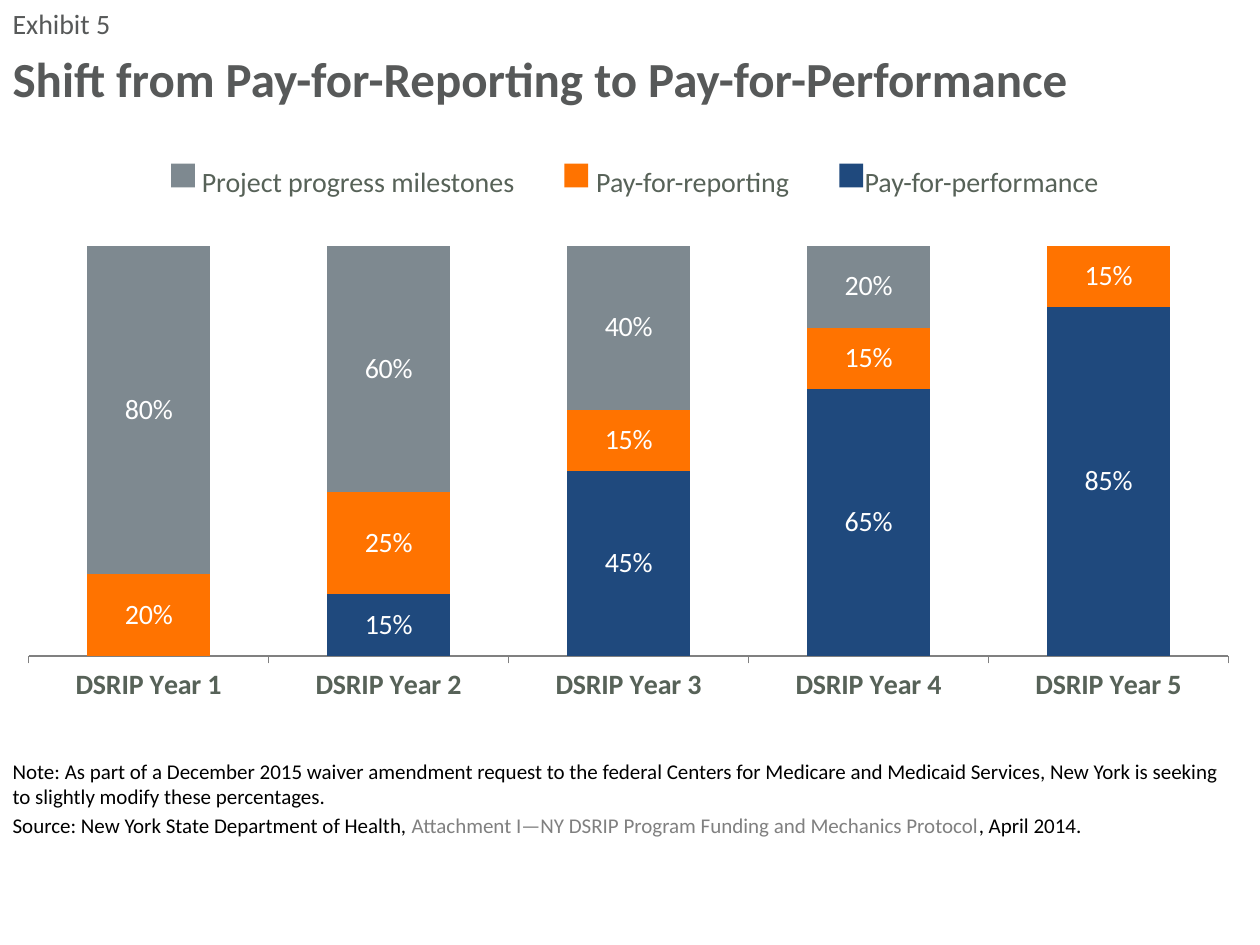
from pptx import Presentation
from pptx.chart.data import CategoryChartData
from pptx.dml.color import RGBColor
from pptx.enum.chart import XL_CHART_TYPE, XL_LABEL_POSITION, XL_TICK_LABEL_POSITION, XL_TICK_MARK
from pptx.enum.shapes import MSO_SHAPE
from pptx.enum.text import MSO_ANCHOR, MSO_AUTO_SIZE, PP_ALIGN
from pptx.oxml import parse_xml
from pptx.oxml.ns import nsdecls
from pptx.util import Cm, Pt

STACKED = XL_CHART_TYPE.COLUMN_STACKED
CENTER = XL_LABEL_POSITION.CENTER
RECTANGLE = MSO_SHAPE.RECTANGLE
TOP, MIDDLE, BOTTOM = MSO_ANCHOR.TOP, MSO_ANCHOR.MIDDLE, MSO_ANCHOR.BOTTOM

FONT = "Calibri"
HEADING, LABEL, BLACK, GRAY, WHITE = "575959", "576258", "000000", "808080", "FFFFFF"
BLUE, ORANGE, SLATE = "1F497D", "FF7300", "7E8990"

# Each paragraph is a list of (text, colour) spans.
EXHIBIT = [[("Exhibit 5", HEADING)]]
TITLE = [[("Shift from Pay-for-Reporting to Pay-for-Performance", HEADING)]]
NOTES = [
    [("Note: As part of a December 2015 waiver amendment request to the federal Centers for "
      "Medicare and Medicaid Services, New York is seeking to slightly modify these percentages.",
      BLACK)],
    [("Source: New York State Department of Health, ", BLACK),
     ("Attachment I—NY DSRIP Program Funding and Mechanics Protocol", GRAY),
     (", April 2014.", BLACK)],
]
YEARS = [f"DSRIP Year {number}" for number in range(1, 6)]
SERIES = [
    ("Pay-for-performance", BLUE, (0, 0.15, 0.45, 0.65, 0.85)),
    ("Pay-for-reporting", ORANGE, (0.2, 0.25, 0.15, 0.15, 0.15)),
    ("Project progress milestones", SLATE, (0.8, 0.6, 0.4, 0.2, 0)),
]
# Left edges of marker and text, in cm, in the order of SERIES.
LEGEND_LEFTS = [(16.92, 17.43), (11.38, 12.02), (3.45, 4.07)]
PLOT_AREA = {"x": 0.035, "y": 0.029, "w": 0.931, "h": 0.837}


def color(code):
    return RGBColor.from_string(code)


def format_font(font, size, code, bold=False):
    values = {"name": FONT, "size": Pt(size), "bold": bold}
    for name, value in values.items():
        setattr(font, name, value)
    font.color.rgb = color(code)


def place(shape, left, top, width, height):
    shape.left, shape.top, shape.width, shape.height = map(Cm, (left, top, width, height))


def write(box, paragraphs, size, anchor, bold=False):
    frame = box.text_frame
    frame.word_wrap = True
    frame.auto_size = MSO_AUTO_SIZE.NONE
    frame.vertical_anchor = anchor
    for index, spans in enumerate(paragraphs):
        para = frame.add_paragraph() if index else frame.paragraphs[0]
        para.alignment = PP_ALIGN.LEFT
        para.space_before = Pt(0.2 * size if index else 0)
        for text, code in spans:
            span = para.add_run()
            span.text = text
            format_font(span.font, size, code, bold)


def add_legend(page):
    for (name, code, _), (marker_left, text_left) in zip(SERIES, LEGEND_LEFTS):
        marker = page.shapes.add_shape(RECTANGLE, Cm(marker_left), Cm(3.3), Cm(0.48), Cm(0.48))
        marker.shadow.inherit = False
        marker.fill.solid()
        marker.fill.fore_color.rgb = color(code)
        marker.line.fill.background()
        box = page.shapes.add_textbox(Cm(text_left), Cm(3.25), Cm(7), Cm(0.8))
        box.text_frame.margin_left = box.text_frame.margin_right = 0
        write(box, [[(name, LABEL)]], 16, MIDDLE)


def add_chart(page):
    data = CategoryChartData(number_format="0%")
    data.categories = YEARS
    for name, _, values in SERIES:
        data.add_series(name, values)
    chart = page.shapes.add_chart(STACKED, Cm(-0.33), Cm(4.67), Cm(25.98), Cm(9.88), data).chart
    chart.has_legend = chart.has_title = False
    format_font(chart.font, 18, BLACK)

    plot = chart.plots[0]
    plot.gap_width, plot.overlap, plot.vary_by_categories = 95, 100, False
    for series, (_, code, values) in zip(plot.series, SERIES):
        series.format.fill.solid()
        series.format.fill.fore_color.rgb = color(code)
        labels = series.data_labels
        labels.show_value = True
        labels.position = CENTER
        labels.number_format, labels.number_format_is_linked = "0%", False
        format_font(labels.font, 16, WHITE)
        if 0 in values:
            labels._element.insert(0, parse_xml(
                f'<c:dLbl {nsdecls("c")}><c:idx val="{values.index(0)}"/>'
                '<c:delete val="1"/></c:dLbl>'))

    years = chart.category_axis
    years.major_tick_mark = XL_TICK_MARK.OUTSIDE
    years.tick_label_position = XL_TICK_LABEL_POSITION.LOW
    years.format.line.color.rgb = color(GRAY)
    years.format.line.width = Pt(0.75)
    format_font(years.tick_labels.font, 16, LABEL, bold=True)
    shares = chart.value_axis
    shares.minimum_scale, shares.maximum_scale = 0, 1
    shares.has_major_gridlines = shares.visible = False
    fix_plot_area(chart)


def fix_plot_area(chart):
    area = chart._chartSpace.chart.plotArea
    for layout in area.findall("c:layout", {"c": area.nsmap["c"]}):
        area.remove(layout)
    sizes = "".join(f'<c:{key} val="{value}"/>' for key, value in PLOT_AREA.items())
    area.insert(0, parse_xml(
        f'<c:layout {nsdecls("c")}><c:manualLayout><c:layoutTarget val="inner"/>'
        f'<c:xMode val="edge"/><c:yMode val="edge"/>{sizes}</c:manualLayout></c:layout>'))


def main():
    deck = Presentation()
    deck.slide_width, deck.slide_height = Cm(25.4), Cm(19.05)
    page = deck.slides.add_slide(deck.slide_layouts.get_by_name("Comparison"))
    title, exhibit, left_content, notes, right_content = page.placeholders
    for unused in (left_content, right_content):
        unused.element.getparent().remove(unused.element)

    place(title, 0, 0.84, 25.4, 1.45)
    write(title, TITLE, 28, MIDDLE, bold=True)
    place(exhibit, 0, 0, 25.4, 0.84)
    write(exhibit, EXHIBIT, 16, TOP)
    place(notes, 0, 15.19, 24.97, 1.83)
    write(notes, NOTES, 12, BOTTOM)
    add_chart(page)
    add_legend(page)
    deck.save("out.pptx")


if __name__ == "__main__":
    main()
